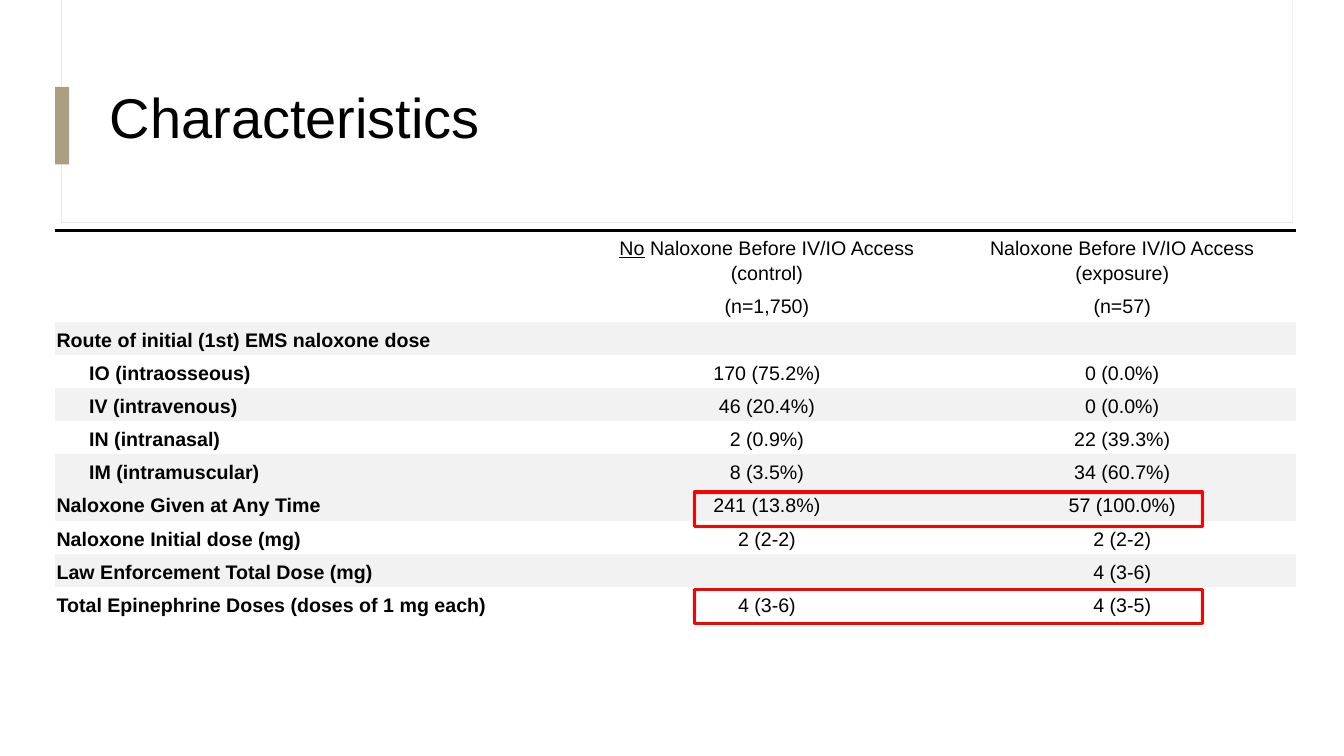
from lxml import etree
from pptx import Presentation
from pptx.dml.color import RGBColor
from pptx.enum.shapes import MSO_SHAPE
from pptx.enum.text import MSO_ANCHOR, PP_ALIGN
from pptx.oxml.ns import qn
from pptx.util import Pt

RECT = MSO_SHAPE.RECTANGLE
LEFT, CENTER = PP_ALIGN.LEFT, PP_ALIGN.CENTER
MIDDLE, BOTTOM = MSO_ANCHOR.MIDDLE, MSO_ANCHOR.BOTTOM

TITLE = "Characteristics"
HEADERS = [
    ("", [("No", True), (" Naloxone Before IV/IO Access (control)", False)],
     "Naloxone Before IV/IO Access (exposure)"),
    ("", "(n=1,750)", "(n=57)"),
]
ROWS = [
    ("Route of initial (1st) EMS naloxone dose", "", ""),
    ("IO (intraosseous)", "170 (75.2%)", "0 (0.0%)"),
    ("IV (intravenous)", "46 (20.4%)", "0 (0.0%)"),
    ("IN (intranasal)", "2 (0.9%)", "22 (39.3%)"),
    ("IM (intramuscular)", "8 (3.5%)", "34 (60.7%)"),
    ("Naloxone Given at Any Time", "241 (13.8%)", "57 (100.0%)"),
    ("Naloxone Initial dose (mg)", "2 (2-2)", "2 (2-2)"),
    ("Law Enforcement Total Dose (mg)", "", "4 (3-6)"),
    ("Total Epinephrine Doses (doses of 1 mg each)", "4 (3-6)", "4 (3-5)"),
]
INDENTED = {3, 4, 5, 6}
SHADED = {2, 4, 6, 7, 9}
COLUMNS = (378.7, 259.9, 247.7)
HEADER_HEIGHT, ROW_HEIGHT = 41.4, 23.7
HIGHLIGHT_TOPS = (351.4, 421.2)

THEME = {
    "font": "Arial", "title": 40, "body": 14,
    "text": "000000", "panel": "FFFFFF", "panel_line": "F0E5E5",
    "accent": "AAA081", "band": "F2F2F2", "rule": "000000", "highlight": "FF0000",
}


def color(name):
    return RGBColor.from_string(THEME[name])


def write(tf, text, size="body", bold=False, align=LEFT, spacing=1.15, indent=0):
    p = tf.paragraphs[0]
    p.alignment, p.line_spacing = align, spacing
    if indent:
        p._p.get_or_add_pPr().set("marL", str(Pt(indent)))
    if not text:
        end = etree.SubElement(p._p, qn("a:endParaRPr"))
        end.set("sz", str(THEME[size] * 100))
        return
    for part, underline in ([(text, False)] if isinstance(text, str) else text):
        r = p.add_run()
        r.text = part
        r.font.name, r.font.size = THEME["font"], Pt(THEME[size])
        r.font.bold, r.font.underline = bold, underline
        r.font.color.rgb = color("text")


def add_box(s, box, fill=None, line=None, width=0.75):
    sp = s.shapes.add_shape(RECT, *map(Pt, box))
    sp.shadow.inherit = False
    if fill:
        sp.fill.solid()
        sp.fill.fore_color.rgb = color(fill)
    else:
        sp.fill.background()
    if line:
        sp.line.color.rgb = color(line)
        sp.line.width = Pt(width)
    else:
        sp.line.fill.background()


def add_top_rule(cell):
    ln = etree.Element(qn("a:lnT"), w=str(Pt(2.25)))
    solid = etree.SubElement(ln, qn("a:solidFill"))
    etree.SubElement(solid, qn("a:srgbClr"), val=THEME["rule"])
    cell._tc.get_or_add_tcPr().insert(0, ln)


def add_data_table(s):
    data = HEADERS + ROWS
    heights = [HEADER_HEIGHT] + [ROW_HEIGHT] * (len(data) - 1)
    frame = s.shapes.add_table(len(data), len(COLUMNS), Pt(39.2), Pt(164.7),
                               Pt(sum(COLUMNS)), Pt(sum(heights)))
    table = frame.table
    table.first_row = table.horz_banding = False
    style = table._tbl.tblPr.find(qn("a:tableStyleId"))
    style.text = "{2D5ABB26-0587-4C30-8999-92F81FD0307C}"
    for column, width in zip(table.columns, COLUMNS):
        column.width = Pt(width)
    for i, (row, height) in enumerate(zip(data, heights)):
        table.rows[i].height = Pt(height)
        for j, text in enumerate(row):
            cell = table.cell(i, j)
            cell.vertical_anchor = BOTTOM
            cell.margin_left = cell.margin_right = Pt(1.2)
            cell.margin_top = cell.margin_bottom = Pt(2.6)
            if i in SHADED:
                cell.fill.solid()
                cell.fill.fore_color.rgb = color("band")
            else:
                cell.fill.background()
            if i == 0:
                add_top_rule(cell)
            write(cell.text_frame, text, bold=j == 0, align=CENTER if j else LEFT,
                  indent=23.3 if j == 0 and i in INDENTED else 0)


def main():
    prs = Presentation()
    prs.slide_width, prs.slide_height = Pt(960), Pt(540)
    s = prs.slides.add_slide(prs.slide_layouts[5])

    add_box(s, (44.1, 0, 879, 159.3), "panel", "panel_line")
    add_box(s, (44.7, 0, 878.4, 158.4), "panel")
    add_box(s, (39.4, 62, 10.1, 55.4), "accent")

    title = s.shapes.title
    s.shapes.element.append(title.element)
    title.left, title.top, title.width, title.height = map(Pt, (71.3, 31.7, 506.2, 108))
    title.text_frame.vertical_anchor = MIDDLE
    title.text_frame.word_wrap = True
    write(title.text_frame, TITLE, size="title", spacing=0.9)

    add_data_table(s)
    for top in HIGHLIGHT_TOPS:
        add_box(s, (496.1, top, 362.9, 24.5), line="highlight", width=2.25)
    prs.save("out.pptx")


if __name__ == "__main__":
    main()
